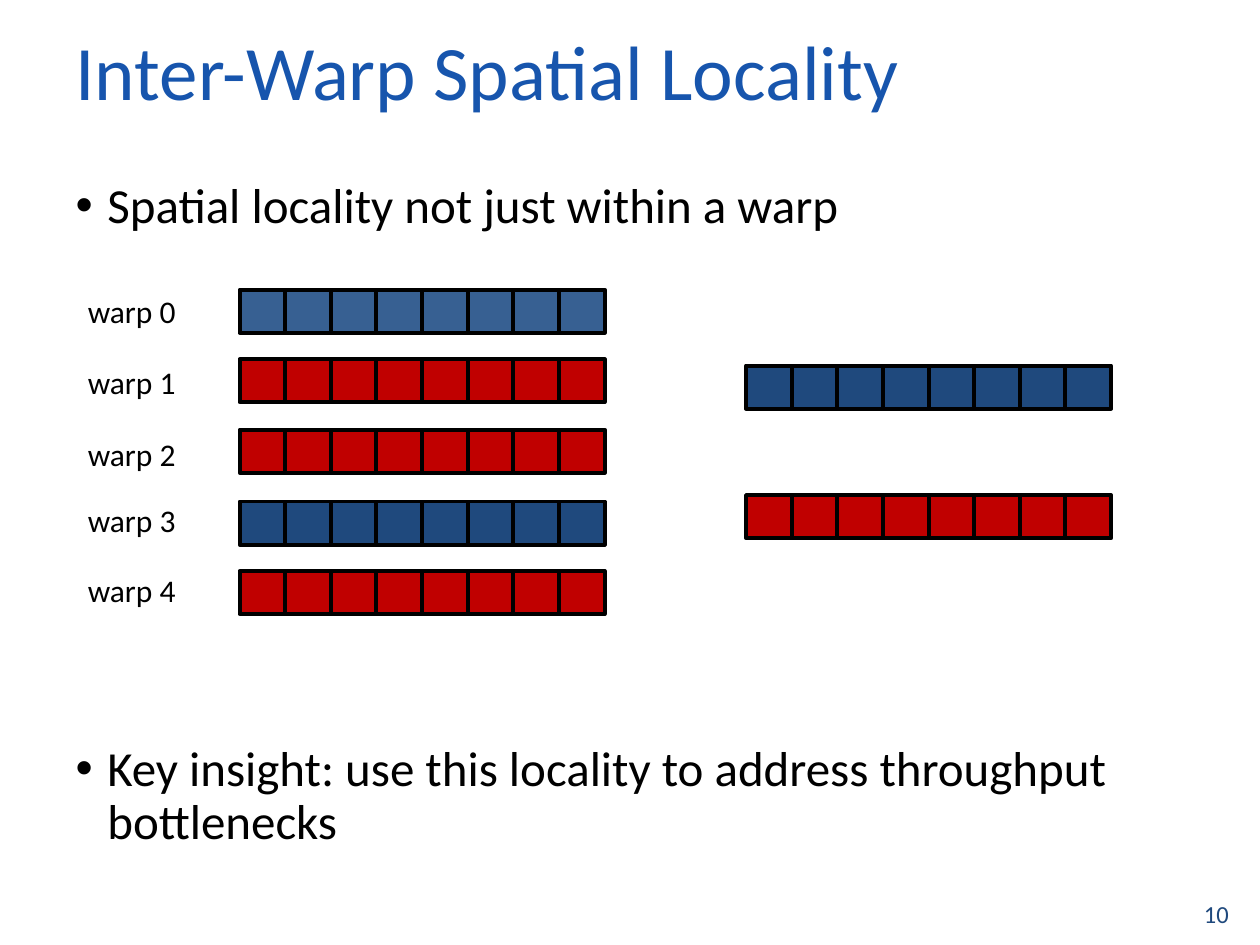
from pptx import Presentation
from pptx.dml.color import RGBColor
from pptx.enum.shapes import MSO_SHAPE as Preset
from pptx.enum.text import MSO_ANCHOR as Anchor, MSO_AUTO_SIZE as AutoSize, PP_ALIGN as Align
from pptx.util import Cm, Pt

THEME = {
    "font": "Calibri",
    "title": {"size": 44, "color": "1755AD"},
    "body": {"size": 28, "color": "000000"},
    "label": {"size": 18, "color": "000000"},
    "number": {"size": 14, "color": "1F497D"},
    "line": {"color": "000000", "width": 2.25},
    "light blue": "376092",
    "blue": "1F497D",
    "red": "C00000",
}

TITLE = "Inter-Warp Spatial Locality"
PAGE_NUMBER = "10"
BULLETS = [
    ("Spatial locality not just within a warp", Pt(10)),
    ("Key insight: use this locality to address throughput bottlenecks", Cm(10.28)),
]
WARPS = [
    ("warp 0", "light blue", 5.84, 5.77),
    ("warp 1", "red", 7.24, 7.19),
    ("warp 2", "red", 8.66, 8.64),
    ("warp 3", "blue", 10.11, 9.98),
    ("warp 4", "red", 11.51, 11.38),
]
MERGED_ROWS = [("blue", 7.37), ("red", 9.98)]

WARP_LEFT, MERGED_LEFT, LABEL_LEFT = 4.83, 15.04, 1.52
CELL_COUNT, CELL_WIDTH, CELL_HEIGHT = 8, 0.92, 0.87


def set_values(target, values):
    for name, value in values.items():
        setattr(target, name, value)


def place(shape, left, top, width, height):
    set_values(shape, {"left": Cm(left), "top": Cm(top),
                       "width": Cm(width), "height": Cm(height)})


def write(paragraph, text, style, **layout):
    run = paragraph.add_run()
    run.text = text
    set_values(run.font, {"name": THEME["font"], "size": Pt(THEME[style]["size"])})
    run.font.color.rgb = RGBColor.from_string(THEME[style]["color"])
    set_values(paragraph, layout)


def add_text(slide, text, style, box, frame_format, **layout):
    shape = slide.shapes.add_textbox(*map(Cm, box))
    set_values(shape.text_frame, {"word_wrap": True, **frame_format})
    write(shape.text_frame.paragraphs[0], text, style, **layout)


def add_cell_row(slide, left, top, color):
    group = slide.shapes.add_group_shape()
    for column in range(CELL_COUNT):
        cell = group.shapes.add_shape(
            Preset.RECTANGLE, Cm(left + column * CELL_WIDTH), Cm(top),
            Cm(CELL_WIDTH), Cm(CELL_HEIGHT))
        cell.shadow.inherit = False
        cell.fill.solid()
        cell.fill.fore_color.rgb = RGBColor.from_string(THEME[color])
        cell.line.color.rgb = RGBColor.from_string(THEME["line"]["color"])
        cell.line.width = Pt(THEME["line"]["width"])


def add_bullets(body):
    place(body, 1.27, 3.53, 21.89, 14.02)
    frame = body.text_frame
    frame.auto_size = AutoSize.NONE
    for index, (text, gap) in enumerate(BULLETS):
        paragraph = frame.add_paragraph() if index else frame.paragraphs[0]
        write(paragraph, text, "body", line_spacing=0.9, space_before=gap)
        properties = paragraph._p.get_or_add_pPr()
        properties.set("marL", str(Cm(0.64)))
        properties.set("indent", str(Cm(-0.64)))


def main():
    presentation = Presentation()
    set_values(presentation, {"slide_width": Cm(25.4), "slide_height": Cm(19.05)})
    slide = presentation.slides.add_slide(presentation.slide_layouts[1])

    title = slide.shapes.title
    place(title, 1.27, 0.23, 22.86, 2.34)
    set_values(title.text_frame, {"auto_size": AutoSize.NONE,
                                  "vertical_anchor": Anchor.MIDDLE})
    write(title.text_frame.paragraphs[0], TITLE, "title", alignment=Align.LEFT)
    add_bullets(slide.placeholders[1])

    for label, color, row_top, label_top in WARPS:
        add_text(slide, label, "label", (LABEL_LEFT, label_top, 3.23, 1.02),
                 {"auto_size": AutoSize.SHAPE_TO_FIT_TEXT})
        add_cell_row(slide, WARP_LEFT, row_top, color)
    for color, row_top in MERGED_ROWS:
        add_cell_row(slide, MERGED_LEFT, row_top, color)

    add_text(slide, PAGE_NUMBER, "number", (19.1, 17.91, 5.92, 1.02),
             {"vertical_anchor": Anchor.MIDDLE}, alignment=Align.RIGHT)
    presentation.save("out.pptx")


if __name__ == "__main__":
    main()
